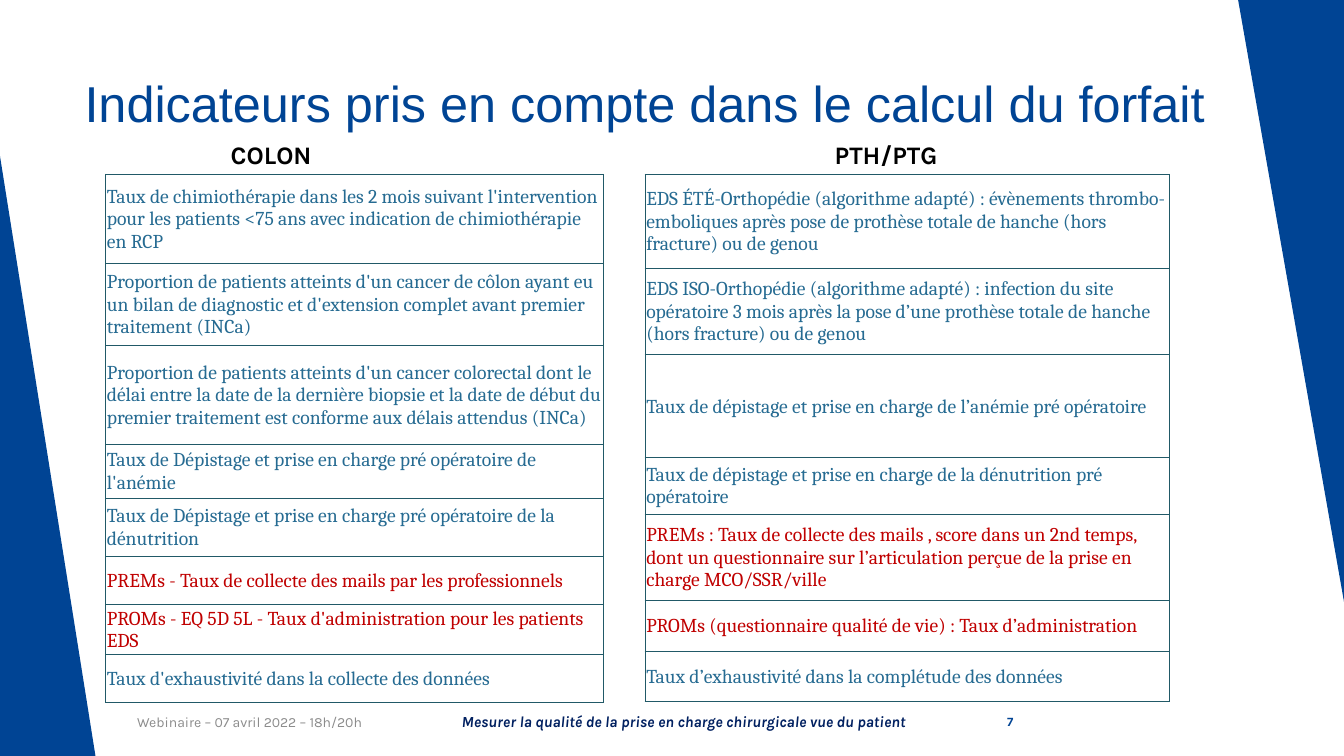
"""Slide listing the indicators used to compute the care package, for colon and hip/knee surgery."""
from lxml import etree
from pptx import Presentation
from pptx import util as u
from pptx.dml.color import RGBColor
from pptx.enum import shapes, text
from pptx.oxml import ns

PX = 9144
COLORS = {"brand": "004494", "border": "215967", "standard": "266B92", "patient": "C00000",
          "footer": "002060", "date": "8C8C8C", "heading": "000000"}


def style(paragraph, font, size, color, bold=False, italic=False):
    paragraph.font.name = font
    paragraph.font.size = u.Pt(size)
    paragraph.font.color.rgb = RGBColor.from_string(COLORS[color])
    paragraph.font.bold = bold
    paragraph.font.italic = italic


def border(cell, sides):
    properties = cell._tc.get_or_add_tcPr()
    for position, (side, width) in enumerate(sides.items()):
        line = etree.Element(ns.qn(f"a:ln{side}"), w=str(u.Pt(width)))
        fill = etree.SubElement(line, ns.qn("a:solidFill"))
        etree.SubElement(fill, ns.qn("a:srgbClr"), val=COLORS["border"])
        properties.insert(position, line)


deck = Presentation()
deck.slide_width, deck.slide_height = 1333 * PX, 750 * PX
slide = deck.slides.add_slide(deck.slide_layouts[6])

for left, top, width, height, rotation in [(0, 155, 95, 597, 0), (1228, 0, 105, 597, 180)]:
    wedge = slide.shapes.add_shape(shapes.MSO_SHAPE.RIGHT_TRIANGLE,
                                   left * PX, top * PX, width * PX, height * PX)
    wedge.rotation = rotation
    wedge.shadow.inherit = False
    wedge.fill.solid()
    wedge.fill.fore_color.rgb = RGBColor.from_string(COLORS["brand"])
    wedge.line.fill.background()

LEFT, CENTER, RIGHT = text.PP_ALIGN.LEFT, text.PP_ALIGN.CENTER, text.PP_ALIGN.RIGHT
TOP, MIDDLE = text.MSO_ANCHOR.TOP, text.MSO_ANCHOR.MIDDLE
labels = [
    ("Indicateurs pris en compte dans le calcul du forfait",
     (74, 67, 1173, 144), LEFT, TOP, ("Arial", 36, "brand")),
    ("COLON", (219, 133, 196, 40), LEFT, TOP, ("Karla", 18, "heading", True)),
    ("PTH/PTG", (818, 133, 196, 40), LEFT, TOP, ("Karla", 18, "heading", True)),
    ("Webinaire – 07 avril 2022 – 18h/20h",
     (103, 696, 289, 40), CENTER, MIDDLE, ("Karla", 10, "date")),
    ("Mesurer la qualité de la prise en charge chirurgicale vue du patient",
     (416, 696, 525, 40), CENTER, MIDDLE, ("Karla", 11, "footer", True, True)),
    ("7", (940, 696, 75, 40), RIGHT, MIDDLE, ("Karla", 9, "brand", True)),
]
for wording, box, alignment, anchor, look in labels:
    frame = slide.shapes.add_textbox(*(side * PX for side in box)).text_frame
    frame.word_wrap = True
    frame.vertical_anchor = anchor
    frame.text = wording
    frame.paragraphs[0].alignment = alignment
    style(frame.paragraphs[0], *look)

colon = [
    (88, "Taux de chimiothérapie dans les 2 mois suivant l'intervention pour les patients "
         "<75 ans avec indication de chimiothérapie en RCP"),
    (82, "Proportion de patients atteints d'un cancer de côlon ayant eu un bilan de diagnostic "
         "et d'extension complet avant premier traitement (INCa)"),
    (98, "Proportion de patients atteints d'un cancer colorectal dont le délai entre la date de la "
         "dernière biopsie et la date de début du premier traitement est conforme aux délais "
         "attendus (INCa)"),
    (53, "Taux de Dépistage et prise en charge pré opératoire de l'anémie"),
    (58, "Taux de Dépistage et prise en charge pré opératoire de la dénutrition"),
    (48, "PREMs - Taux de collecte des mails par les professionnels"),
    (49, "PROMs - EQ 5D 5L - Taux d'administration pour les patients EDS"),
    (48, "Taux d'exhaustivité dans la collecte des données"),
]
hip_knee = [
    (93, "EDS ÉTÉ-Orthopédie (algorithme adapté) : évènements thrombo-emboliques après pose de "
         "prothèse totale de hanche (hors fracture) ou de genou"),
    (86, "EDS ISO-Orthopédie (algorithme adapté) : infection du site opératoire 3 mois après la "
         "pose d’une prothèse totale de hanche (hors fracture) ou de genou"),
    (102, "Taux de dépistage et prise en charge de l’anémie pré opératoire"),
    (56, "Taux de dépistage et prise en charge de la dénutrition pré opératoire"),
    (86, "PREMs : Taux de collecte des mails , score dans un 2nd temps, dont un questionnaire sur "
         "l’articulation perçue de la prise en charge MCO/SSR/ville"),
    (50, "PROMs (questionnaire qualité de vie) : Taux d’administration"),
    (50, "Taux d’exhaustivité dans la complétude des données"),
]
for left, width, last_border, indicators in [(105, 493, 1, colon), (640, 520, 0.5, hip_knee)]:
    total = sum(height for height, _ in indicators)
    table = slide.shapes.add_table(len(indicators), 1, left * PX, 173 * PX,
                                   width * PX, total * PX).table
    table.first_row = table.horz_banding = False
    for index, (height, wording) in enumerate(indicators):
        table.rows[index].height = height * PX
        cell = table.cell(index, 0)
        cell.fill.background()
        cell.margin_left = cell.margin_right = cell.margin_top = PX
        cell.margin_bottom = 0
        cell.vertical_anchor = MIDDLE
        cell.text = wording
        reported = wording.startswith(("PREMs", "PROMs"))
        style(cell.text_frame.paragraphs[0], "Cambria", 14, "patient" if reported else "standard")
        border(cell, {"L": 1, "R": 0.5, "T": 1 if index == 0 else 0.5,
                      "B": last_border if index == len(indicators) - 1 else 0.5})

deck.save("out.pptx")
